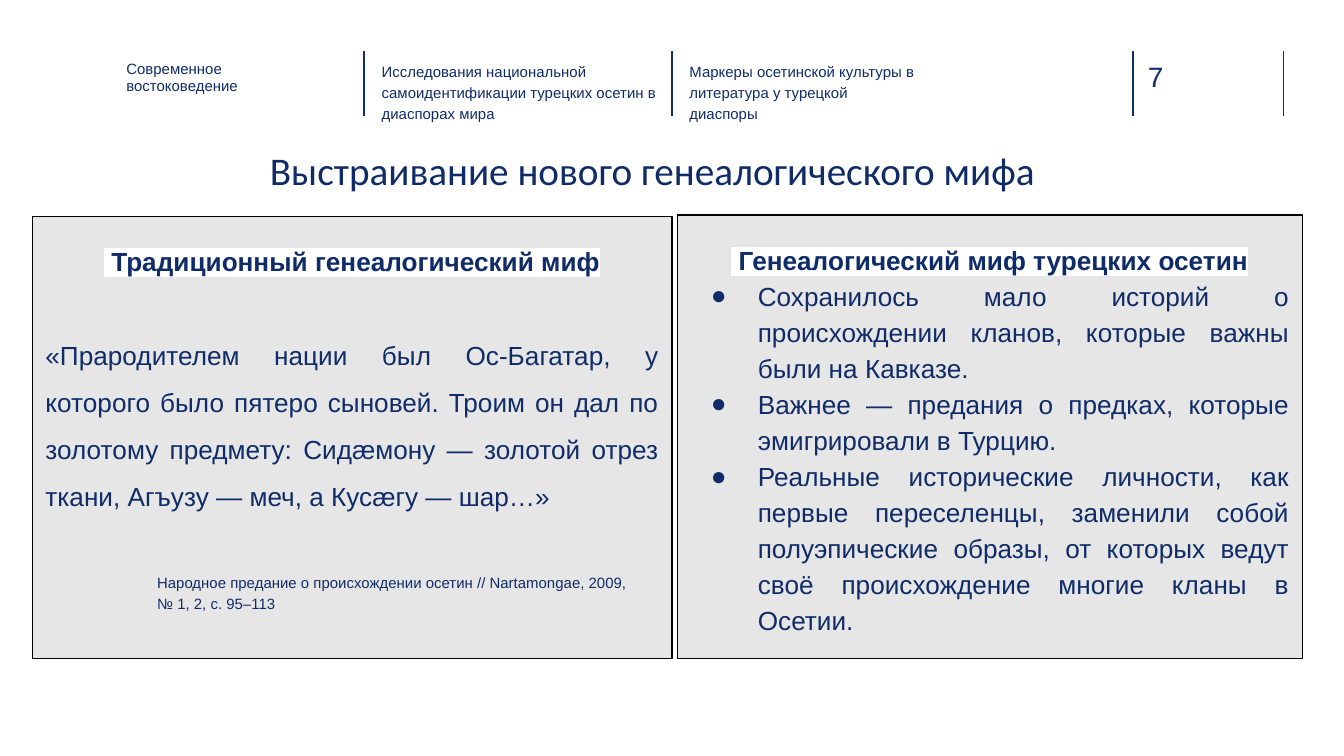
from dataclasses import dataclass

from lxml import etree
from pptx import Presentation
from pptx.dml.color import RGBColor
from pptx.enum.shapes import MSO_CONNECTOR, MSO_SHAPE
from pptx.enum.text import MSO_ANCHOR, MSO_AUTO_SIZE, PP_ALIGN
from pptx.oxml.ns import qn
from pptx.util import Inches, Pt

LEFT, CENTER, JUSTIFY = PP_ALIGN.LEFT, PP_ALIGN.CENTER, PP_ALIGN.JUSTIFY
TOP = MSO_ANCHOR.TOP
NO_AUTOFIT = MSO_AUTO_SIZE.NONE
STRAIGHT = MSO_CONNECTOR.STRAIGHT
RECTANGLE = MSO_SHAPE.RECTANGLE

NAVY = RGBColor(0x0F, 0x2C, 0x68)
RULE_BLUE = RGBColor(0x10, 0x2D, 0x69)
PANEL_GRAY = RGBColor(0xE7, 0xE6, 0xE6)
WHITE = RGBColor(0xFF, 0xFF, 0xFF)
BLACK = RGBColor(0, 0, 0)

SLIDE_WIDTH = 10
SLIDE_HEIGHT = SLIDE_WIDTH * 9 / 16
RULE_TOP, RULE_BOTTOM = 0.38, 0.86
RULE_POSITIONS = (2.71, 5, 8.43, 9.55)


@dataclass
class Box:
    left: float
    top: float
    width: float
    height: float

    def lengths(self):
        return [Inches(v) for v in (self.left, self.top, self.width, self.height)]


@dataclass
class Label:
    text: str
    box: Box
    size: float = 8
    margin: float = 0
    spacing: float = 1.15
    color: RGBColor = NAVY


@dataclass
class Panel:
    heading: str
    box: Box
    body: tuple
    spacing: float
    space_before: float = 0
    bulleted: bool = False


LABELS = (
    Label("Современное востоковедение", Box(0.94, 0.44, 1.56, 0.34), spacing=1),
    Label("Исследования национальной самоидентификации турецких осетин в диаспорах мира",
          Box(2.84, 0.45, 2.06, 0.33)),
    Label("Маркеры осетинской культуры в литература у турецкой диаспоры",
          Box(5.13, 0.45, 1.7, 0.33)),
    Label("7", Box(8.54, 0.44, 0.55, 0.25), size=15, spacing=1, color=RULE_BLUE),
)
CITATION = Label(
    "Народное предание о происхождении осетин // Nartamongae, 2009, № 1, 2, с. 95–113",
    Box(1.07, 4.15, 3.82, 0.5), margin=0.1)
PANELS = (
    Panel(" Традиционный генеалогический миф", Box(0.24, 1.61, 4.76, 3.29),
          ("«Прародителем нации был Ос-Багатар, у которого было пятеро сыновей. "
           "Троим он дал по золотому предмету: Сидæмону — золотой отрез ткани, "
           "Агъузу — меч, а Кусæгу — шар…»",),
          spacing=1.5, space_before=25),
    Panel(" Генеалогический миф турецких осетин", Box(5.04, 1.6, 4.65, 3.3),
          ("Сохранилось мало историй о происхождении кланов, которые важны были на Кавказе.",
           "Важнее — предания о предках, которые эмигрировали в Турцию.",
           "Реальные исторические личности, как первые переселенцы, заменили собой "
           "полуэпические образы, от которых ведут своё происхождение многие кланы в Осетии."),
          spacing=1.15, bulleted=True),
)


def add_color(parent, tag: str, color: RGBColor) -> None:
    element = etree.SubElement(parent, qn(tag))
    etree.SubElement(element, qn("a:srgbClr")).set("val", str(color))


def add_bullet(paragraph) -> None:
    properties = paragraph._p.get_or_add_pPr()
    properties.set("marL", str(Inches(0.5)))
    properties.set("indent", str(Inches(-0.35)))
    add_color(properties, "a:buClr", NAVY)
    etree.SubElement(properties, qn("a:buFont")).set("typeface", "Arial")
    etree.SubElement(properties, qn("a:buChar")).set("char", "●")


def write_text(paragraph, text: str, *, size: float, color: RGBColor = NAVY,
               font: str = "Arial", bold: bool = False, align=LEFT, spacing: float = 1,
               space_before: float = 0, bullet: bool = False, highlight=None) -> None:
    if bullet:
        add_bullet(paragraph)
    paragraph.alignment = align
    paragraph.line_spacing = spacing
    if space_before:
        paragraph.space_before = Pt(space_before)
    run = paragraph.add_run()
    run.text = text
    run.font.size = Pt(size)
    run.font.bold = bold
    run.font.color.rgb = color
    if highlight is not None:
        add_color(run._r.get_or_add_rPr(), "a:highlight", highlight)
    run.font.name = font


def prepare_frame(shape, margin: float):
    frame = shape.text_frame
    frame.word_wrap = True
    frame.auto_size = NO_AUTOFIT
    frame.vertical_anchor = TOP
    frame.margin_left = frame.margin_right = Inches(margin)
    frame.margin_top = frame.margin_bottom = Inches(margin)
    return frame


def add_rule(slide, x: float) -> None:
    rule = slide.shapes.add_connector(
        STRAIGHT, Inches(x), Inches(RULE_TOP), Inches(x), Inches(RULE_BOTTOM))
    rule.line.color.rgb = RULE_BLUE
    rule.line.width = Pt(1)
    etree.SubElement(rule._element.spPr, qn("a:effectLst"))


def add_label(slide, label: Label) -> None:
    shape = slide.shapes.add_textbox(*label.box.lengths())
    frame = prepare_frame(shape, label.margin)
    write_text(frame.paragraphs[0], label.text, size=label.size,
               color=label.color, spacing=label.spacing)


def add_panel(slide, panel: Panel) -> None:
    shape = slide.shapes.add_shape(RECTANGLE, *panel.box.lengths())
    shape.shadow.inherit = False
    shape.fill.solid()
    shape.fill.fore_color.rgb = PANEL_GRAY
    shape.line.color.rgb = BLACK
    shape.line.width = Pt(0.75)
    frame = prepare_frame(shape, 0.1)
    write_text(frame.paragraphs[0], panel.heading, size=14, bold=True,
               align=CENTER, spacing=1.5, highlight=WHITE)
    for text in panel.body:
        write_text(frame.add_paragraph(), text, size=14, align=JUSTIFY,
                   spacing=panel.spacing, space_before=panel.space_before,
                   bullet=panel.bulleted)


def add_title(slide, text: str, box: Box) -> None:
    title = slide.shapes.title
    title.left, title.top, title.width, title.height = box.lengths()
    frame = prepare_frame(title, 0.1)
    write_text(frame.paragraphs[0], text, size=21, font="Calibri", align=CENTER)


def main() -> None:
    presentation = Presentation()
    presentation.slide_width = Inches(SLIDE_WIDTH)
    presentation.slide_height = Inches(SLIDE_HEIGHT)
    slide = presentation.slides.add_slide(presentation.slide_layouts[5])

    # Header strip
    for x in RULE_POSITIONS:
        add_rule(slide, x)
    for label in LABELS:
        add_label(slide, label)

    # Title and the two compared myths
    add_title(slide, "Выстраивание нового генеалогического мифа", Box(0.88, 0.99, 7.95, 0.41))
    for panel in PANELS:
        add_panel(slide, panel)
    add_label(slide, CITATION)

    presentation.save("out.pptx")


if __name__ == "__main__":
    main()
